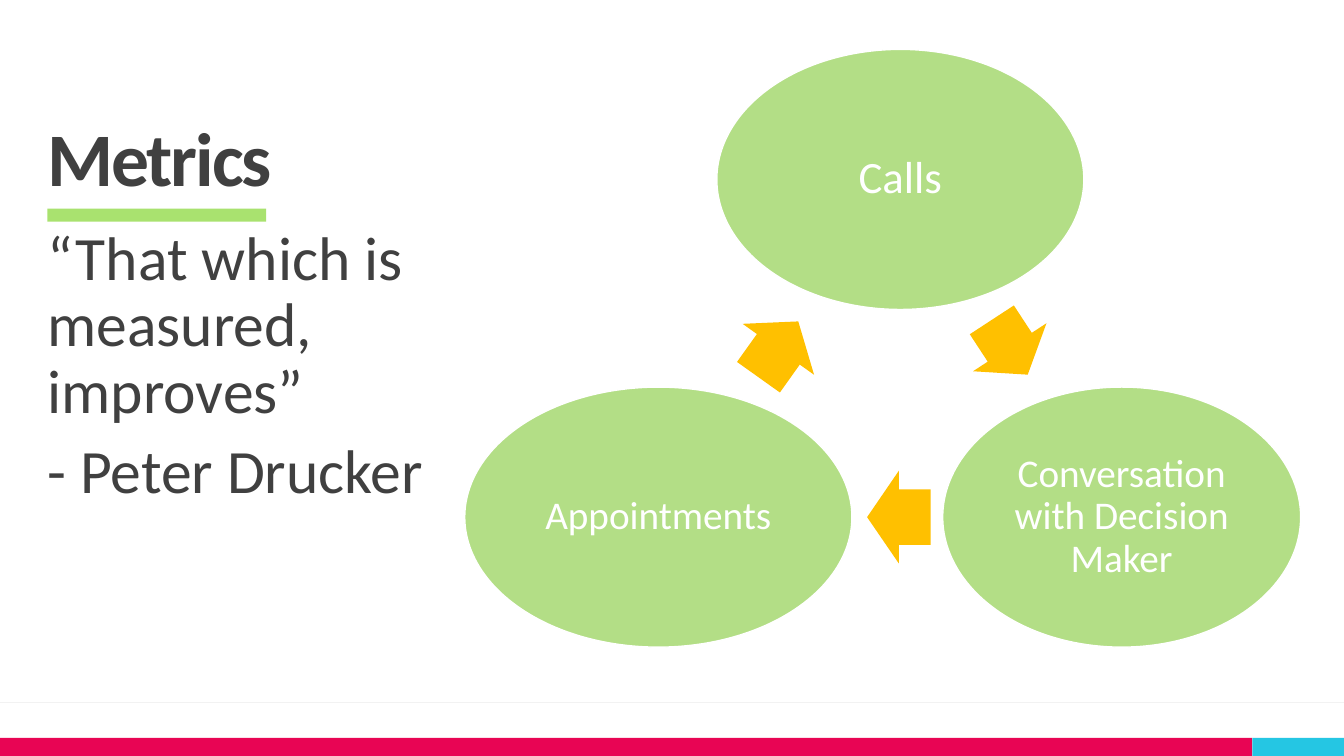
from lxml.etree import SubElement
from pptx import Presentation
from pptx.dml.color import RGBColor
from pptx.enum.shapes import MSO_CONNECTOR, MSO_SHAPE
from pptx.enum.text import MSO_ANCHOR, MSO_AUTO_SIZE, PP_ALIGN
from pptx.oxml.ns import qn
from pptx.util import Inches, Pt

FONT = "Calibri"
COLORS = {
    "text": "404040", "white": "FFFFFF", "rule": "F2F2F2",
    "red": "E80554", "cyan": "25C6E3", "accent": "A9E26F",
    "oval": "92D050", "arrow": "FFC000",
}
OVAL_OPACITY = 69  # percent

TITLE = "Metrics"
QUOTE = ["“That which is measured, improves”", "- Peter Drucker"]

# left, top, width, height, color
BARS = [
    (0, 7.32, 12.42, 0.18, "red"),
    (12.42, 7.32, 0.91, 0.18, "cyan"),
    (0.47, 2.07, 2.17, 0.13, "accent"),
]
OVAL_HEIGHT = 2.58
# text, left, top, width, font size
STAGES = [
    ("Calls", 7.11, 0.49, 3.64, 32),
    ("Conversation with Decision Maker", 9.35, 3.84, 3.55, 28),
    ("Appointments", 4.61, 3.84, 3.84, 28),
]
# left, top, width, height, rotation
ARROWS = [
    (9.69, 3.01, 0.65, 0.87, 56.8),
    (8.6, 4.67, 0.63, 0.92, 180),
    (7.38, 3.03, 0.68, 0.87, 305.5),
]


def rgb(name):
    return RGBColor.from_string(COLORS[name])


def add_filled(slide, kind, box, color):
    shape = slide.shapes.add_shape(kind, *map(Inches, box))
    shape.shadow.inherit = False
    shape.fill.solid()
    shape.fill.fore_color.rgb = rgb(color)
    shape.line.fill.background()
    return shape


def format_frame(frame, anchor, margin):
    frame.word_wrap = True
    frame.auto_size = MSO_AUTO_SIZE.NONE
    frame.vertical_anchor = anchor
    frame.margin_left = frame.margin_right = Inches(margin)
    frame.margin_top = frame.margin_bottom = Inches(margin)


def format_paragraph(paragraph, size, color, alignment, before=0):
    paragraph.alignment = alignment
    paragraph.line_spacing = 0.9
    paragraph.space_before = Pt(before)
    paragraph.font.name = FONT
    paragraph.font.size = Pt(size)
    paragraph.font.color.rgb = rgb(color)


def place(shape, *box):
    shape.left, shape.top, shape.width, shape.height = map(Inches, box)


def add_footer_rule(slide):
    line = slide.shapes.add_connector(
        MSO_CONNECTOR.STRAIGHT, 0, Inches(6.97), Inches(13.33), Inches(6.97))
    line.line.color.rgb = rgb("rule")
    line.line.width = Pt(0.5)
    SubElement(line._element.spPr, qn("a:effectLst"))


def fill_title(title):
    place(title, 0.47, 0.47, 4.3, 1.54)
    title.text_frame.text = TITLE
    format_frame(title.text_frame, MSO_ANCHOR.BOTTOM, 0)
    paragraph = title.text_frame.paragraphs[0]
    format_paragraph(paragraph, 54, "text", PP_ALIGN.LEFT)
    paragraph.font.bold = True
    paragraph.runs[0].font._element.set("spc", "-150")


def fill_quote(body):
    place(body, 0.47, 2.25, 4.3, 4.17)
    body.text_frame.text = "\n".join(QUOTE)
    format_frame(body.text_frame, MSO_ANCHOR.TOP, 0)
    for paragraph in body.text_frame.paragraphs:
        format_paragraph(paragraph, 44, "text", PP_ALIGN.LEFT, before=10)
        properties = paragraph._p.get_or_add_pPr()
        properties.set("marL", "0")
        properties.set("indent", "0")
        bullet = SubElement(properties, qn("a:buNone"))
        properties.find(qn("a:defRPr")).addprevious(bullet)


def add_stage(slide, text, left, top, width, size):
    oval = add_filled(slide, MSO_SHAPE.OVAL, (left, top, width, OVAL_HEIGHT), "oval")
    color = oval.fill._xPr.find(qn("a:solidFill"))[0]
    SubElement(color, qn("a:alpha"), val=str(OVAL_OPACITY * 1000))
    oval.line.color.rgb = rgb("white")
    oval.line.width = Pt(1)
    oval.text_frame.text = text
    format_frame(oval.text_frame, MSO_ANCHOR.MIDDLE, 0.04)
    format_paragraph(oval.text_frame.paragraphs[0], size, "white", PP_ALIGN.CENTER)


def add_arrow(slide, *box, rotation):
    arrow = add_filled(slide, MSO_SHAPE.RIGHT_ARROW, box, "arrow")
    arrow.adjustments[0] = 0.6
    arrow.adjustments[1] = 0.5
    arrow.rotation = rotation


def main():
    presentation = Presentation()
    presentation.slide_width = Inches(13.33)
    presentation.slide_height = Inches(7.5)
    slide = presentation.slides.add_slide(presentation.slide_layouts[1])
    fill_title(slide.shapes.title)
    fill_quote(slide.placeholders[1])
    add_footer_rule(slide)
    for *box, color in BARS:
        add_filled(slide, MSO_SHAPE.RECTANGLE, box, color)
    for stage in STAGES:
        add_stage(slide, *stage)
    for *box, rotation in ARROWS:
        add_arrow(slide, *box, rotation=rotation)
    presentation.save("out.pptx")


if __name__ == "__main__":
    main()
